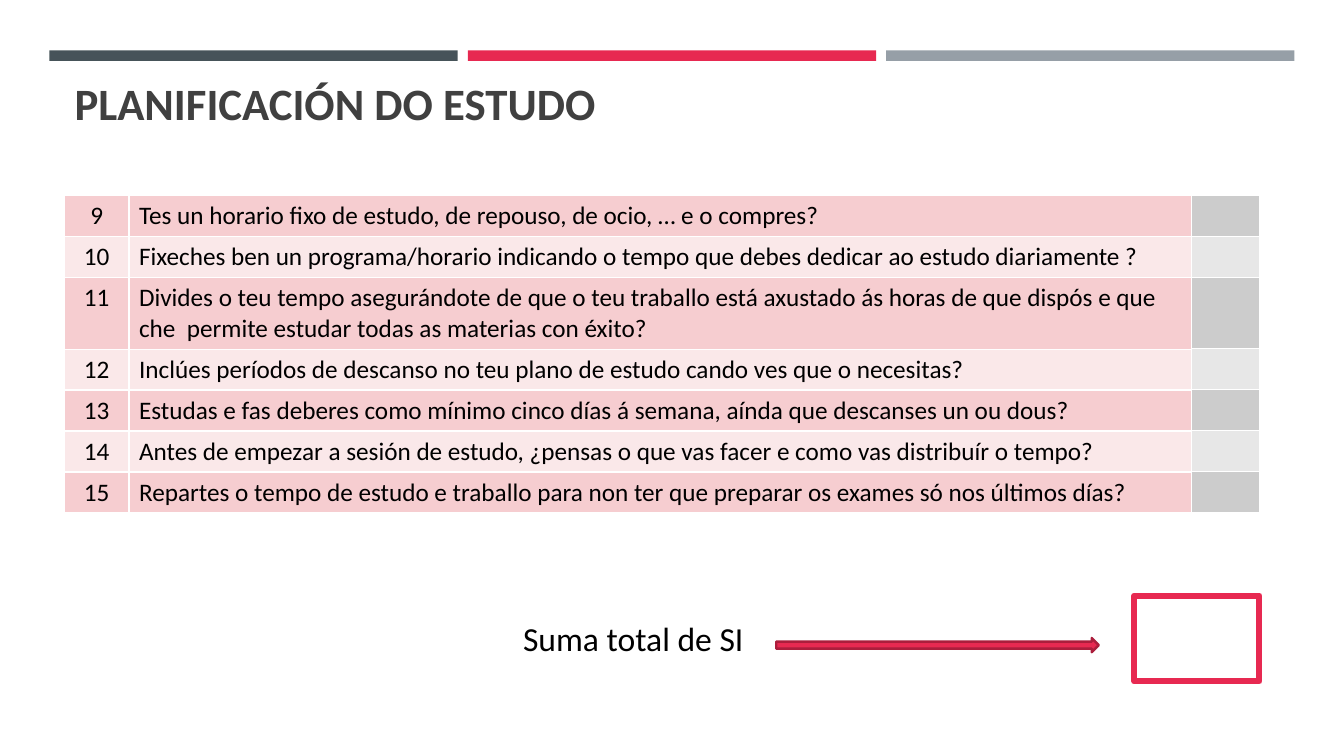
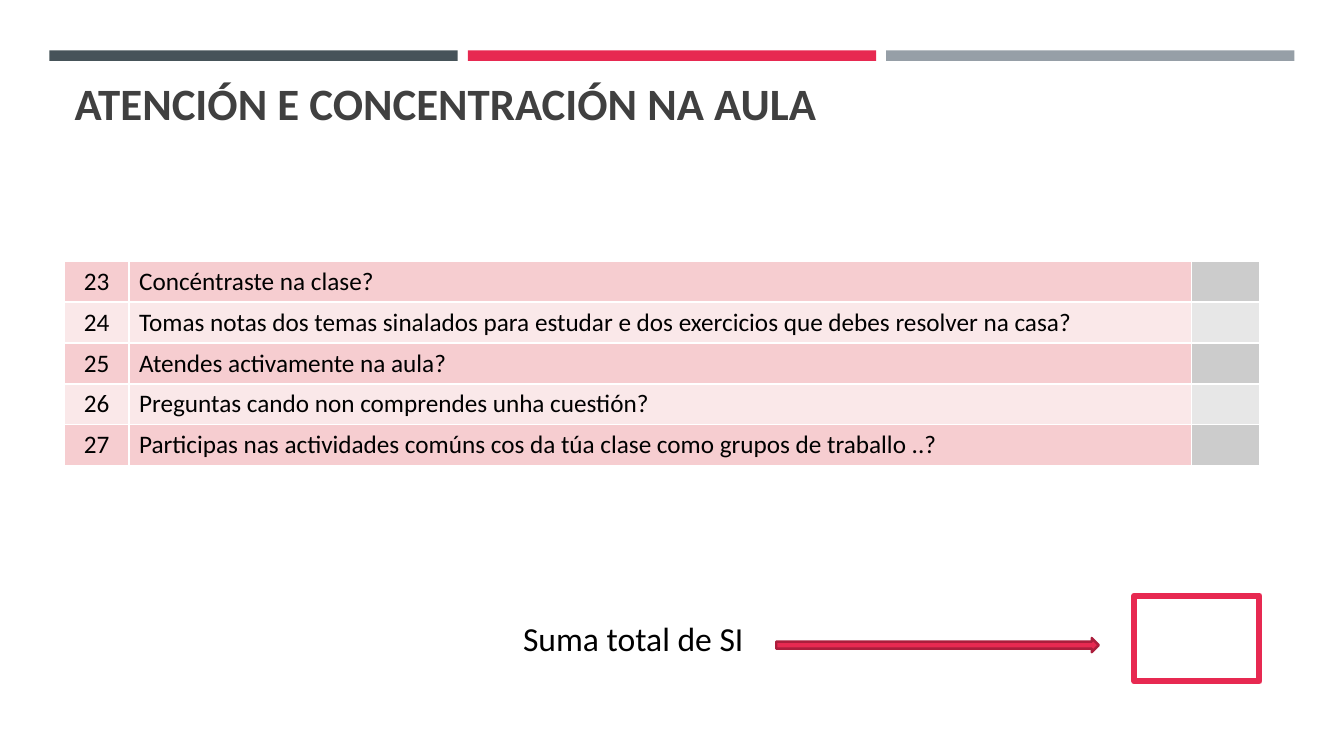
from dataclasses import dataclass

from lxml import etree
from pptx import Presentation
from pptx.dml.color import RGBColor
from pptx.enum.shapes import MSO_SHAPE
from pptx.enum.text import MSO_ANCHOR, MSO_AUTO_SIZE, PP_ALIGN
from pptx.oxml.ns import qn
from pptx.util import Inches, Length, Pt

RECTANGLE, ARROW = MSO_SHAPE.RECTANGLE, MSO_SHAPE.RIGHT_ARROW
LEFT, CENTER = PP_ALIGN.LEFT, PP_ALIGN.CENTER
TOP, BOTTOM = MSO_ANCHOR.TOP, MSO_ANCHOR.BOTTOM
NO_AUTOFIT = MSO_AUTO_SIZE.NONE
TITLE_ONLY = 5
SLIDE_WIDTH, SLIDE_HEIGHT = Inches(13.33), Inches(7.5)


@dataclass(frozen=True)
class Theme:
    """Colours, type sizes and line widths of the deck."""

    font: str = "Calibri"
    title: str = "404040"
    text: str = "000000"
    paper: str = "FFFFFF"
    accent: str = "E72951"
    accent_edge: str = "AB1E3C"
    bands: tuple[str, ...] = ("465359", "E72951", "969FA7")
    question_rows: tuple[str, ...] = ("F6CDD0", "FAE8E9")
    answer_rows: tuple[str, ...] = ("CCCCCC", "E7E7E7")
    title_size: float = 32
    total_size: float = 24
    table_size: float = 18
    cell_edge: float = 1
    arrow_edge: float = 1.75
    total_edge: float = 4.5


@dataclass(frozen=True)
class Box:
    """A frame in percent of the slide's width and height."""

    left: float
    top: float
    width: float
    height: float

    def frame(self) -> tuple[Length, Length, Length, Length]:
        """Return the frame as lengths."""
        return across(self.left), down(self.top), across(self.width), down(self.height)


@dataclass(frozen=True)
class Question:
    """A numbered question and the text lines it takes."""

    text: str
    lines: int = 1


@dataclass(frozen=True)
class Section:
    """One page of the questionnaire."""

    title: str
    first_number: int
    table_top: float
    questions: tuple[Question, ...]


THEME = Theme()
MARGIN = 4.8
NUMBER_WIDTH, QUESTION_WIDTH, ANSWER_WIDTH = 4.8, 79.06, 5.03
ROW_HEIGHT, EXTRA_LINE = 5.42, 4.0
TITLE_BOX = Box(MARGIN, 10.27, 90.47, 7.6)
FIRST_BAND, BAND_GAP = Box(3.68, 6.67, 30.38, 1.4), 0.75
TOTAL_LABEL = Box(38.18, 81.07, 18.38, 6.67)
TOTAL_ARROW = Box(57.76, 84.4, 24, 1.87)
TOTAL_BOX = Box(84.4, 78.8, 9.3, 11.33)

SECTIONS = (
    Section("PLANIFICACIÓN DO ESTUDO", 9, 25.87, (
        Question("Tes un horario fixo de estudo, de repouso, de ocio, … e o compres?"),
        Question("Fixeches ben un programa/horario indicando o tempo que debes dedicar "
                 "ao estudo diariamente ?"),
        Question("Divides o teu tempo asegurándote de que o teu traballo está axustado ás "
                 "horas de que dispós e que che  permite estudar todas as materias con "
                 "éxito?", lines=2),
        Question("Inclúes períodos de descanso no teu plano de estudo cando ves que o "
                 "necesitas?"),
        Question("Estudas e fas deberes como mínimo cinco días á semana, aínda que "
                 "descanses un ou dous?"),
        Question("Antes de empezar a sesión de estudo, ¿pensas o que vas facer e como vas "
                 "distribuír o tempo?"),
        Question("Repartes o tempo de estudo e traballo para non ter que preparar os "
                 "exames só nos últimos días?"),
    )),
    Section("ATENCIÓN E CONCENTRACIÓN NA AULA", 23, 34.53, (
        Question("Concéntraste na clase?"),
        Question("Tomas notas dos temas sinalados para estudar e dos exercicios que debes "
                 "resolver na casa?"),
        Question("Atendes activamente na aula?"),
        Question("Preguntas cando non comprendes unha cuestión?"),
        Question("Participas nas actividades comúns cos da túa clase como grupos de "
                 "traballo ..?"),
    )),
)


def across(share: float) -> Length:
    """Turn a percentage of the slide's width into a length."""
    return Length(round(SLIDE_WIDTH * share / 100))


def down(share: float) -> Length:
    """Turn a percentage of the slide's height into a length."""
    return Length(round(SLIDE_HEIGHT * share / 100))


def write(frame, text: str, *, size: float, color: str = THEME.text, bold: bool = False,
          align: PP_ALIGN = LEFT, anchor: MSO_ANCHOR = TOP, spacing: float = 1.0) -> None:
    """Write one formatted paragraph into a text frame."""
    frame.word_wrap = True
    frame.auto_size = NO_AUTOFIT
    frame.vertical_anchor = anchor
    para = frame.paragraphs[0]
    para.alignment, para.line_spacing = align, spacing
    span = para.add_run()
    span.text = text
    span.font.name, span.font.size, span.font.bold = THEME.font, Pt(size), bold
    span.font.color.rgb = RGBColor.from_string(color)


def add_figure(shapes, kind: MSO_SHAPE, box: Box, fill: str, *,
               edge: str = "", edge_width: float = 0):
    """Add a flat preset shape, outlined when an edge colour is given."""
    shape = shapes.add_shape(kind, *box.frame())
    shape.shadow.inherit = False
    shape.fill.solid()
    shape.fill.fore_color.rgb = RGBColor.from_string(fill)
    if edge:
        shape.line.color.rgb = RGBColor.from_string(edge)
        shape.line.width = Pt(edge_width)
    else:
        shape.line.fill.background()
    return shape


def style_cell(cell, fill: str) -> None:
    """Give a cell its borders and fill."""
    properties = cell._tc.get_or_add_tcPr()
    for side in ("a:lnL", "a:lnR", "a:lnT", "a:lnB"):
        line = etree.SubElement(properties, qn(side), w=str(Pt(THEME.cell_edge)))
        solid = etree.SubElement(line, qn("a:solidFill"))
        etree.SubElement(solid, qn("a:srgbClr"), val=THEME.paper)
    cell.fill.solid()
    cell.fill.fore_color.rgb = RGBColor.from_string(fill)


def add_grid(page, left: float, top: float, widths: tuple[float, ...],
             heights: list[float], fills: tuple[str, ...]):
    """Add a table whose row fills alternate."""
    box = Box(left, top, sum(widths), sum(heights))
    table = page.shapes.add_table(len(heights), len(widths), *box.frame()).table
    table.first_row = table.horz_banding = False
    for column, width in zip(table.columns, widths):
        column.width = across(width)
    for index, (row, height) in enumerate(zip(table.rows, heights)):
        row.height = down(height)
        for cell in row.cells:
            style_cell(cell, fills[index % len(fills)])
    return table


def add_questions(page, section: Section) -> None:
    """Add the numbered questions and the answer column beside them."""
    heights = [ROW_HEIGHT + EXTRA_LINE * (question.lines - 1)
               for question in section.questions]
    widths = (NUMBER_WIDTH, QUESTION_WIDTH)
    table = add_grid(page, MARGIN, section.table_top, widths, heights, THEME.question_rows)
    for index, question in enumerate(section.questions):
        number = str(section.first_number + index)
        write(table.cell(index, 0).text_frame, number, size=THEME.table_size, align=CENTER)
        write(table.cell(index, 1).text_frame, question.text, size=THEME.table_size)
    add_grid(page, MARGIN + sum(widths), section.table_top, (ANSWER_WIDTH,), heights,
             THEME.answer_rows)


def add_total(page) -> None:
    """Add the grouped label, arrow and box for the total."""
    shapes = page.shapes.add_group_shape().shapes
    label = shapes.add_textbox(*TOTAL_LABEL.frame())
    write(label.text_frame, "Suma total de SI", size=THEME.total_size)
    add_figure(shapes, ARROW, TOTAL_ARROW, THEME.accent,
               edge=THEME.accent_edge, edge_width=THEME.arrow_edge)
    add_figure(shapes, RECTANGLE, TOTAL_BOX, THEME.paper,
               edge=THEME.accent, edge_width=THEME.total_edge)


def add_bands(page) -> None:
    """Add the three coloured bands along the top."""
    for index, color in enumerate(THEME.bands):
        left = FIRST_BAND.left + index * (FIRST_BAND.width + BAND_GAP)
        band = Box(left, FIRST_BAND.top, FIRST_BAND.width, FIRST_BAND.height)
        add_figure(page.shapes, RECTANGLE, band, color)


def add_page(deck, section: Section) -> None:
    """Add one page of the questionnaire."""
    page = deck.slides.add_slide(deck.slide_layouts[TITLE_ONLY])
    add_bands(page)
    title = page.shapes.title
    title.left, title.top, title.width, title.height = TITLE_BOX.frame()
    write(title.text_frame, section.title, size=THEME.title_size, color=THEME.title,
          bold=True, anchor=BOTTOM, spacing=0.9)
    add_questions(page, section)
    add_total(page)


def main() -> None:
    """Build and save the deck."""
    deck = Presentation()
    deck.slide_width, deck.slide_height = SLIDE_WIDTH, SLIDE_HEIGHT
    for section in SECTIONS:
        add_page(deck, section)
    deck.save("out.pptx")


if __name__ == "__main__":
    main()
